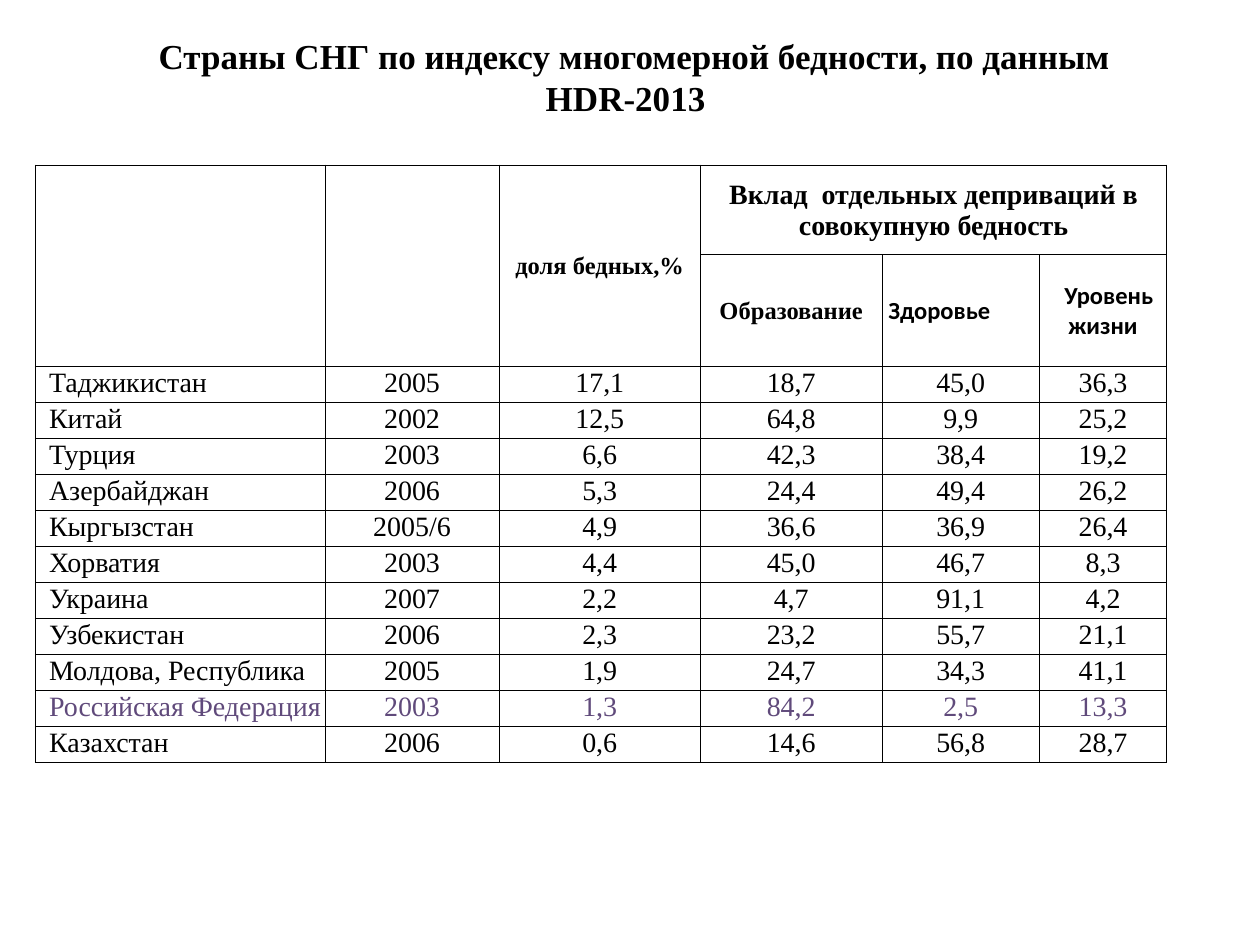
from lxml import etree
from pptx import Presentation
from pptx.dml.color import RGBColor
from pptx.enum.text import MSO_ANCHOR, PP_ALIGN
from pptx.oxml.ns import qn
from pptx.util import Inches, Pt

LEFT, CENTER = PP_ALIGN.LEFT, PP_ALIGN.CENTER
TOP, MIDDLE = MSO_ANCHOR.TOP, MSO_ANCHOR.MIDDLE
TITLE_ONLY = 5

COLORS = {"text": "000000", "border": "000000", "highlight": "604A7B"}
SERIF, SANS = "Times New Roman", "Calibri"

COLUMN_WIDTHS = [2.3, 1.38, 1.6, 1.44, 1.25, 1.01]
HEADER_HEIGHTS = [0.71, 0.89]
ROW_HEIGHT = 0.286
HIGHLIGHTED = "Российская Федерация"
COUNTRIES = [
    ("Таджикистан", "2005", "17,1", "18,7", "45,0", "36,3"),
    ("Китай", "2002", "12,5", "64,8", "9,9", "25,2"),
    ("Турция", "2003", "6,6", "42,3", "38,4", "19,2"),
    ("Азербайджан", "2006", "5,3", "24,4", "49,4", "26,2"),
    ("Кыргызстан", "2005/6", "4,9", "36,6", "36,9", "26,4"),
    ("Хорватия", "2003", "4,4", "45,0", "46,7", "8,3"),
    ("Украина", "2007", "2,2", "4,7", "91,1", "4,2"),
    ("Узбекистан", "2006", "2,3", "23,2", "55,7", "21,1"),
    ("Молдова, Республика", "2005", "1,9", "24,7", "34,3", "41,1"),
    (HIGHLIGHTED, "2003", "1,3", "84,2", "2,5", "13,3"),
    ("Казахстан", "2006", "0,6", "14,6", "56,8", "28,7"),
]


def format_paragraph(paragraph, size, font=SERIF, bold=False, color="text", align=CENTER):
    paragraph.alignment = align
    paragraph.font.size = Pt(size)
    paragraph.font.name = font
    paragraph.font.bold = bold
    paragraph.font.color.rgb = RGBColor.from_string(COLORS[color])


def frame_cell(cell):
    """Thin border on every side, no fill."""
    properties = cell._tc.get_or_add_tcPr()
    for side in ("a:lnL", "a:lnR", "a:lnT", "a:lnB"):
        line = etree.SubElement(properties, qn(side), w=str(Pt(0.5)))
        fill = etree.SubElement(line, qn("a:solidFill"))
        etree.SubElement(fill, qn("a:srgbClr"), val=COLORS["border"])
    cell.fill.background()


def fill_cell(cell, text, size, anchor=TOP, inset=0.01, **style):
    cell.margin_left = Inches(inset)
    cell.margin_top = cell.margin_right = Inches(0.01)
    cell.margin_bottom = 0
    cell.vertical_anchor = anchor
    cell.text = text
    paragraph = cell.text_frame.paragraphs[0]
    format_paragraph(paragraph, size, **style)
    return paragraph


def add_title(slide, left, top, width, height):
    title = slide.shapes.title
    title.left, title.top = Inches(left), Inches(top)
    title.width, title.height = Inches(width), Inches(height)
    title.text = " Страны СНГ по индексу многомерной бедности, по данным HDR-2013 "
    title.text_frame.vertical_anchor = MIDDLE
    format_paragraph(title.text_frame.paragraphs[0], 20, bold=True)


def fill_header(table):
    for column in range(3):
        table.cell(0, column).merge(table.cell(1, column))
    table.cell(0, 3).merge(table.cell(0, 5))

    heading = {"anchor": MIDDLE, "bold": True}
    fill_cell(table.cell(0, 2), "доля бедных,%", 14, **heading)
    fill_cell(table.cell(0, 3), "Вклад  отдельных деприваций в совокупную бедность", 16, **heading)
    fill_cell(table.cell(1, 3), "Образование", 14, **heading)
    fill_cell(table.cell(1, 4), "Здоровье", 14, inset=0.05, font=SANS, align=LEFT, **heading)
    living = fill_cell(table.cell(1, 5), "Уровень жизни", 14, font=SANS, **heading)
    living._p.get_or_add_pPr().set("indent", str(Inches(0.09)))


def add_poverty_table(slide, left, top):
    heights = HEADER_HEIGHTS + [ROW_HEIGHT] * len(COUNTRIES)
    table = slide.shapes.add_table(
        len(heights), len(COLUMN_WIDTHS), Inches(left), Inches(top),
        Inches(sum(COLUMN_WIDTHS)), Inches(sum(heights))).table
    table.first_row = table.horz_banding = False
    for column, width in zip(table.columns, COLUMN_WIDTHS):
        column.width = Inches(width)
    for row, height in zip(table.rows, heights):
        row.height = Inches(height)
    for cell in table.iter_cells():
        frame_cell(cell)

    fill_header(table)
    for row, country in enumerate(COUNTRIES, start=len(HEADER_HEIGHTS)):
        color = "highlight" if country[0] == HIGHLIGHTED else "text"
        name, *figures = country
        fill_cell(table.cell(row, 0), name, 16, inset=0.11, color=color, align=LEFT)
        for column, figure in enumerate(figures, start=1):
            fill_cell(table.cell(row, column), figure, 16, color=color)


def main():
    deck = Presentation()
    deck.slide_width, deck.slide_height = Inches(10), Inches(7.5)
    slide = deck.slides.add_slide(deck.slide_layouts[TITLE_ONLY])
    add_title(slide, 0.75, 0.21, 8.5, 0.79)
    add_poverty_table(slide, 0.28, 1.31)
    deck.save("out.pptx")


if __name__ == "__main__":
    main()
